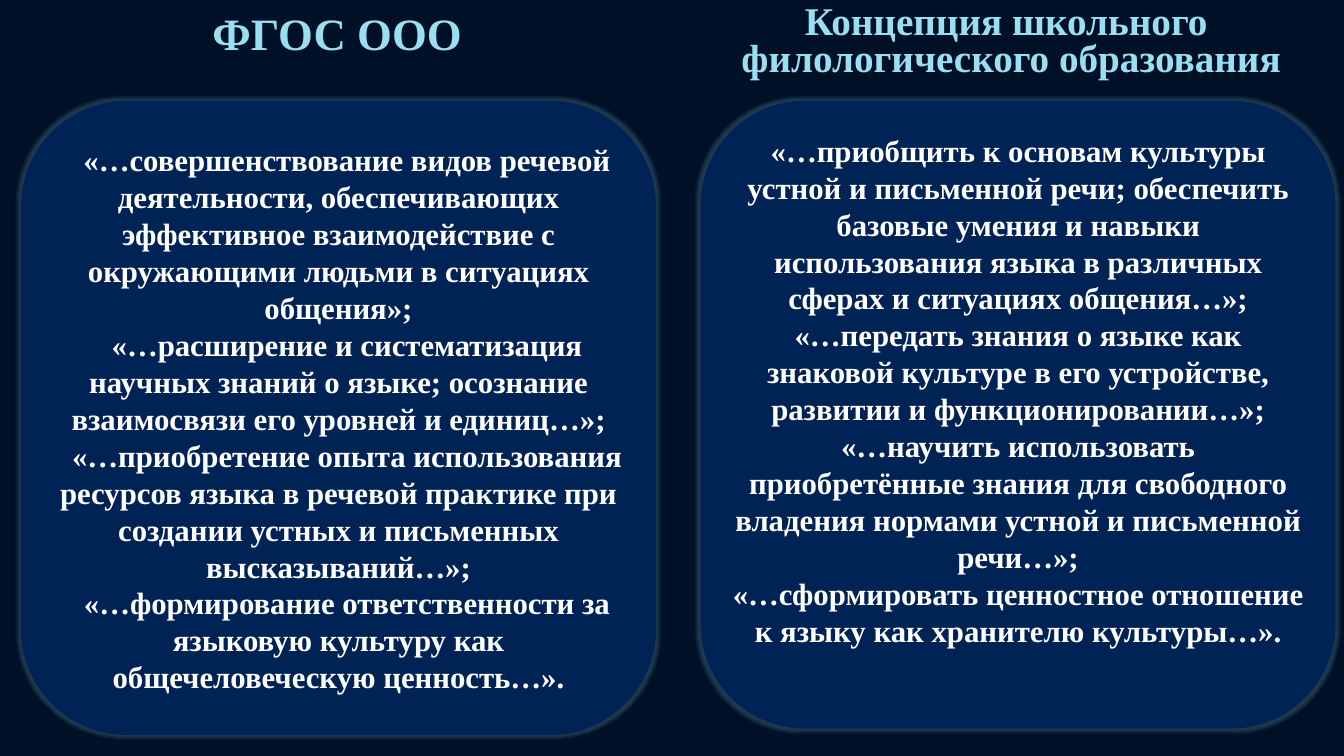
from pptx import Presentation
from pptx.dml.color import RGBColor
from pptx.enum.shapes import MSO_SHAPE as Shape
from pptx.enum.text import MSO_ANCHOR as Anchor, MSO_AUTO_SIZE as AutoSize, PP_ALIGN as Align
from pptx.oxml import parse_xml
from pptx.oxml.ns import nsdecls
from pptx.util import Pt

NIGHT = RGBColor(0x00, 0x10, 0x27)
NAVY = RGBColor(0x00, 0x23, 0x56)
SKY = RGBColor(0x9A, 0xDE, 0xF2)
WHITE = RGBColor(0xFF, 0xFF, 0xFF)
FONT = "Times New Roman"

STANDARD_GOALS = [
    "«…совершенствование видов речевой деятельности, обеспечивающих эффективное "
    "взаимодействие с окружающими людьми в ситуациях общения»;",
    "«…расширение и систематизация научных знаний о языке; осознание взаимосвязи "
    "его уровней и единиц…»;",
    "«…приобретение опыта использования ресурсов языка в речевой практике при "
    "создании устных и письменных высказываний…»;",
    "«…формирование ответственности за языковую культуру как общечеловеческую "
    "ценность…».",
]
CONCEPT_GOALS = [
    "«…приобщить к основам культуры устной и письменной речи; обеспечить базовые "
    "умения и навыки использования языка в различных сферах и ситуациях общения…»;",
    "«…передать знания о языке как знаковой культуре в его устройстве, развитии и "
    "функционировании…»;",
    "«…научить использовать приобретённые знания для свободного владения нормами "
    "устной и письменной речи…»;",
    "«…сформировать ценностное отношение к языку как хранителю культуры…».",
]


def write_paragraphs(frame, lines, size, color, spacing=1.0, indent=0):
    frame.word_wrap = True
    frame.text = "\n".join(lines)
    for paragraph in frame.paragraphs:
        paragraph.alignment = Align.CENTER
        paragraph.line_spacing = spacing
        if indent:
            paragraph._p.get_or_add_pPr().set("indent", str(Pt(indent)))
        font = paragraph.font
        font.name, font.size, font.bold = FONT, Pt(size), True
        font.color.rgb = color


def place_heading(shape, box, lines, size, spacing):
    shape.left, shape.top, shape.width, shape.height = map(Pt, box)
    frame = shape.text_frame
    frame.auto_size = AutoSize.NONE
    frame.vertical_anchor = Anchor.TOP
    write_paragraphs(frame, lines, size, SKY, spacing)


def add_glow(shape):
    shape.shadow.inherit = False
    effects = shape._element.spPr.find(".//{*}effectLst")
    effects.append(parse_xml(
        f'<a:glow {nsdecls("a")} rad="{Pt(4)}"><a:srgbClr val="{SKY}">'
        '<a:alpha val="20000"/></a:srgbClr></a:glow>'))


def add_goals_panel(slide, box, goals, anchor, indent=0):
    panel = slide.shapes.add_shape(Shape.ROUNDED_RECTANGLE, *map(Pt, box))
    panel.fill.solid()
    panel.fill.fore_color.rgb = NAVY
    panel.line.fill.background()
    add_glow(panel)
    frame = panel.text_frame
    frame.margin_left = frame.margin_top = frame.margin_right = frame.margin_bottom = 0
    frame.vertical_anchor = anchor
    write_paragraphs(frame, goals, 22, WHITE, indent=indent)


def build_comparison(presentation):
    slide = presentation.slides.add_slide(presentation.slide_layouts[5])
    slide.background.fill.solid()
    slide.background.fill.fore_color.rgb = NIGHT

    add_goals_panel(slide, (15, 72, 453.6, 453), STANDARD_GOALS, Anchor.MIDDLE, indent=12)
    add_goals_panel(slide, (500.4, 72, 453.6, 448.5), CONCEPT_GOALS, Anchor.TOP)

    place_heading(slide.shapes.title, (144, 5, 193.7, 42.5), ["ФГОС ООО"], 32, 0.9)
    concept_box = (484.6, 0, 475.2, 61.2)
    concept_heading = slide.shapes.add_textbox(*map(Pt, concept_box))
    place_heading(concept_heading, concept_box,
                  ["Концепция школьного ", "филологического образования"], 28, 0.8)


def main():
    presentation = Presentation()
    presentation.slide_width, presentation.slide_height = Pt(960), Pt(540)
    build_comparison(presentation)
    presentation.save("out.pptx")


if __name__ == "__main__":
    main()
